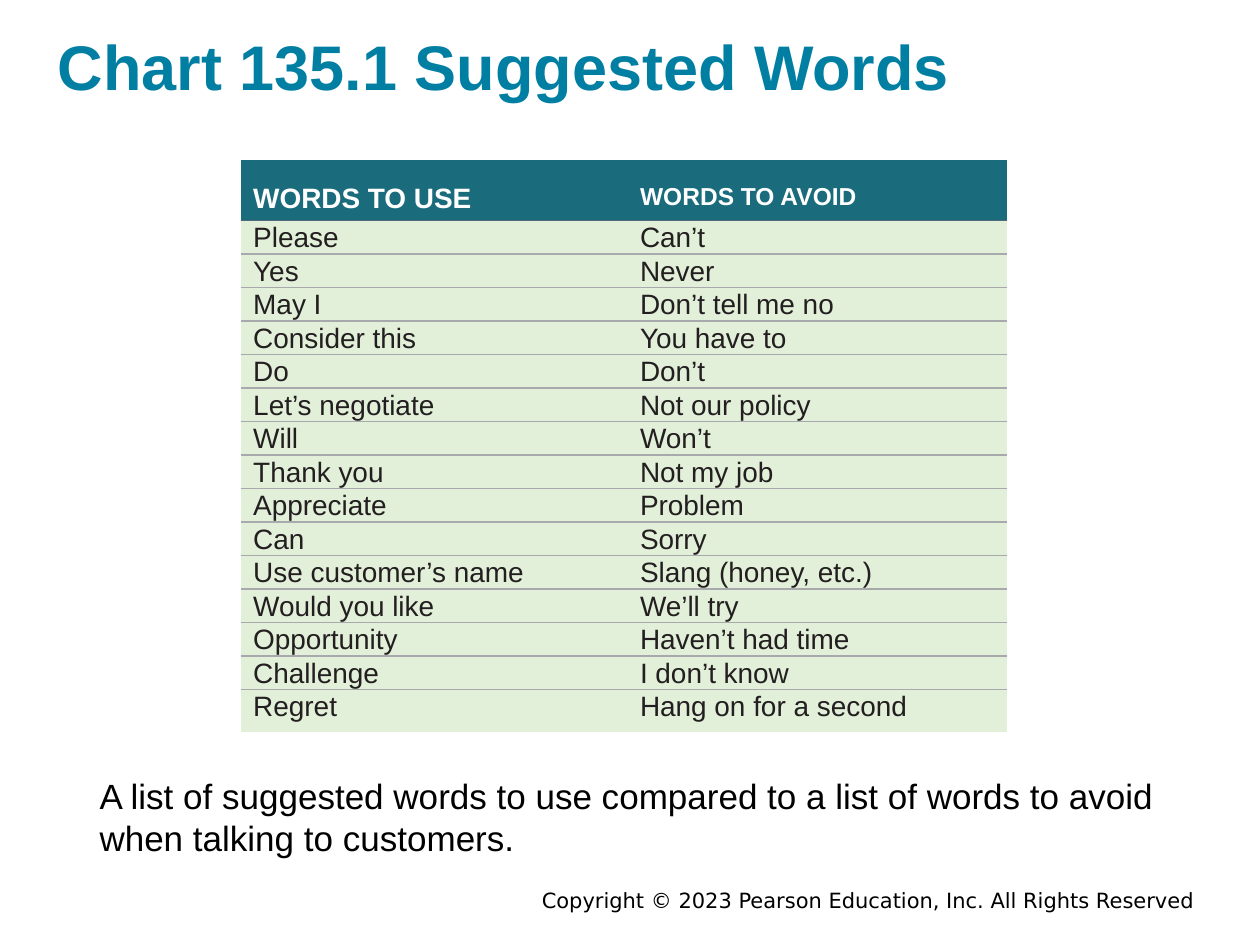
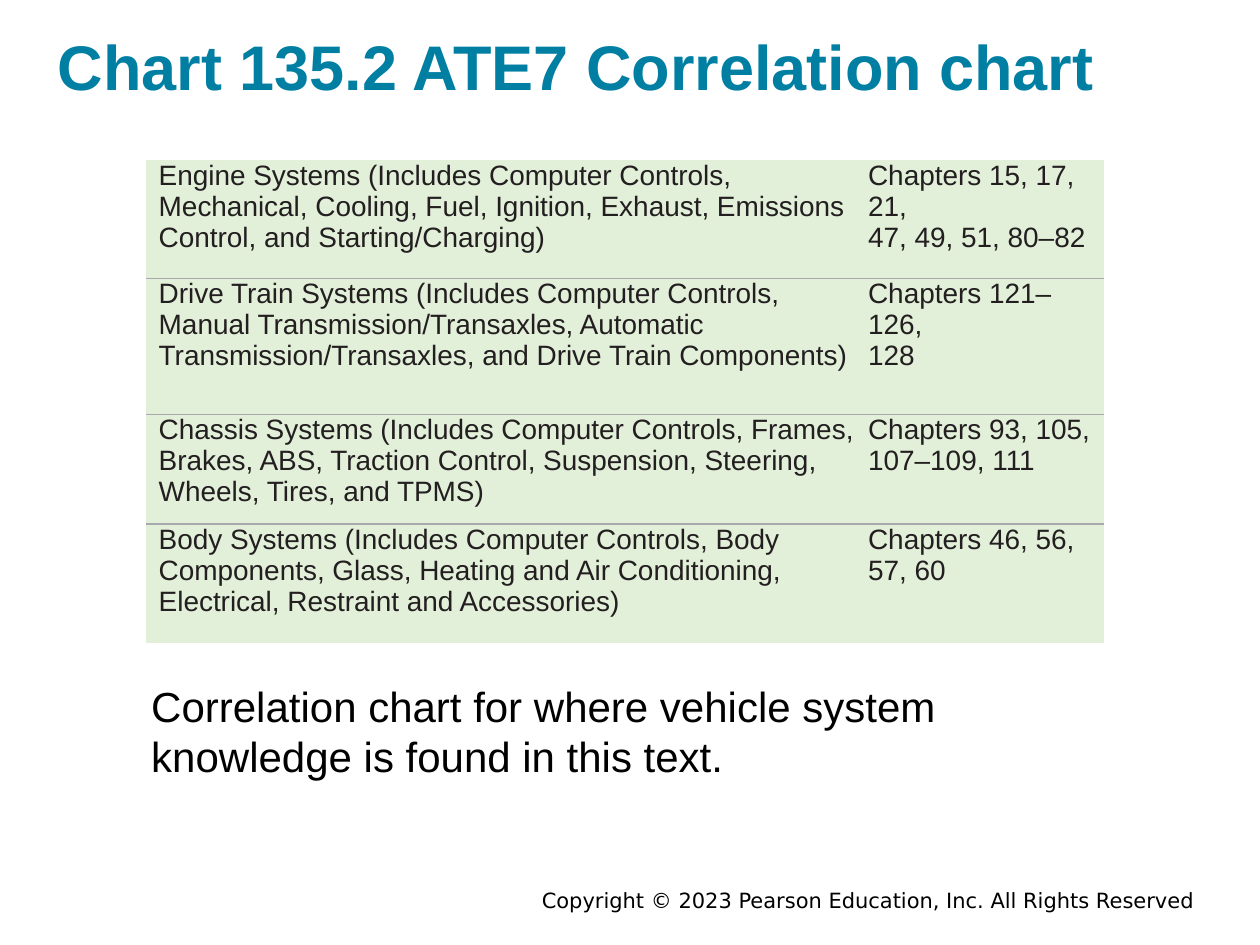
"""Build two slides of customer service charts, each with a table and a caption."""
from lxml import etree
from pptx import Presentation
from pptx.dml.color import RGBColor
from pptx.enum.text import MSO_ANCHOR, MSO_AUTO_SIZE, PP_ALIGN
from pptx.oxml.ns import qn
from pptx.util import Inches, Pt

TOP, MIDDLE = MSO_ANCHOR.TOP, MSO_ANCHOR.MIDDLE
LEFT, RIGHT = PP_ALIGN.LEFT, PP_ALIGN.RIGHT
NO_AUTOFIT = MSO_AUTO_SIZE.NONE

SLIDE_WIDTH, SLIDE_HEIGHT = Inches(10), Inches(7.5)
COLUMN = SLIDE_WIDTH // 100
ROW = SLIDE_HEIGHT // 75
TITLE_ONLY = 5
NO_TABLE_STYLE = "{2D5ABB26-0587-4C30-8999-92F81FD0307C}"

BODY_FONT, FOOTER_FONT = "Arial", "DejaVu Sans"
TITLE_BLUE, BLACK, WHITE, INK = "007FA3", "000000", "FFFFFF", "231F20"
HEADER_TEAL, CELL_GREEN = "1A6C7C", "E2EFD9"
HEADER_RULE, CELL_RULE = "4F6B79", "A7A9AC"
FOOTER = "Copyright © 2023 Pearson Education, Inc. All Rights Reserved"

WORD_PAIRS = [
    ("WORDS TO USE", "WORDS TO AVOID"),
    ("Please", "Can’t"),
    ("Yes", "Never"),
    ("May I", "Don’t tell me no"),
    ("Consider this", "You have to"),
    ("Do", "Don’t"),
    ("Let’s negotiate", "Not our policy"),
    ("Will", "Won’t"),
    ("Thank you", "Not my job"),
    ("Appreciate", "Problem"),
    ("Can", "Sorry"),
    ("Use customer’s name", "Slang (honey, etc.)"),
    ("Would you like", "We’ll try"),
    ("Opportunity", "Haven’t had time"),
    ("Challenge", "I don’t know"),
    ("Regret", "Hang on for a second"),
]
SYSTEM_CHAPTERS = [
    ("Engine Systems (Includes Computer Controls, Mechanical, Cooling, Fuel, "
     "Ignition, Exhaust, Emissions Control, and Starting/Charging)",
     "Chapters 15, 17, 21,\n47, 49, 51, 80–82"),
    ("Drive Train Systems (Includes Computer Controls, Manual "
     "Transmission/Transaxles, Automatic Transmission/Transaxles, and Drive "
     "Train Components)",
     "Chapters 121–126,\n128"),
    ("Chassis Systems (Includes Computer Controls, Frames, Brakes, ABS, "
     "Traction Control, Suspension, Steering, Wheels, Tires, and TPMS)",
     "Chapters 93, 105,\n107–109, 111"),
    ("Body Systems (Includes Computer Controls, Body Components, Glass, Heating "
     "and Air Conditioning, Electrical, Restraint and Accessories)",
     "Chapters 46, 56,\n57, 60"),
]

CHARTS = [
    {"title": "Chart 135.1 Suggested Words", "rows": WORD_PAIRS, "header": True,
     "place": (19.1, 12.7), "widths": (30.4, 30.4), "indents": (1, 1.3),
     "heights": [4.8] + [2.66] * 14 + [3.4], "line_spacing": 1.07,
     "caption": "A list of suggested words to use compared to a list of words "
                "to avoid when talking to customers.",
     "caption_place": (7.9, 61, 83.7, 7.7), "caption_size": 20},
    {"title": "Chart 135.2 ATE7 Correlation chart", "rows": SYSTEM_CHAPTERS,
     "header": False, "place": (11.6, 12.7), "widths": (56.5, 19.5),
     "indents": (1, 0.8), "heights": [9.4, 10.8, 8.7, 9.4], "line_spacing": 1,
     "caption": "Correlation chart for where vehicle system knowledge is found "
                "in this text.",
     "caption_place": (12, 53.5, 74.9, 9.1), "caption_size": 24},
]


def color(hex_string):
    return RGBColor.from_string(hex_string)


def write(frame, text, size, hex_string, font=BODY_FONT, bold=False,
          align=LEFT, anchor=TOP, line_spacing=1):
    frame.word_wrap = True
    frame.vertical_anchor = anchor
    for index, line in enumerate(text.split("\n")):
        para = frame.add_paragraph() if index else frame.paragraphs[0]
        para.alignment = align
        para.line_spacing = line_spacing
        span = para.add_run()
        span.text = line
        span.font.name, span.font.size, span.font.bold = font, Pt(size), bold
        span.font.color.rgb = color(hex_string)


deck = Presentation()
deck.slide_width, deck.slide_height = SLIDE_WIDTH, SLIDE_HEIGHT

for chart in CHARTS:
    page = deck.slides.add_slide(deck.slide_layouts[TITLE_ONLY])

    title = page.shapes.title
    title.left, title.top = int(4.6 * COLUMN), int(1.7 * ROW)
    title.width, title.height = int(89.9 * COLUMN), int(7.1 * ROW)
    title.text_frame.auto_size = NO_AUTOFIT
    title.text_frame.margin_left = title.text_frame.margin_right = 0
    write(title.text_frame, chart["title"], 36, TITLE_BLUE, bold=True)

    left, top = chart["place"]
    table = page.shapes.add_table(
        len(chart["rows"]), len(chart["widths"]), int(left * COLUMN), int(top * ROW),
        int(sum(chart["widths"]) * COLUMN), int(sum(chart["heights"]) * ROW)).table
    table.first_row = chart["header"]
    table.horz_banding = False
    table._tbl.tblPr.find(qn("a:tableStyleId")).text = NO_TABLE_STYLE
    for index, width in enumerate(chart["widths"]):
        table.columns[index].width = int(width * COLUMN)

    last_row = len(chart["rows"]) - 1
    for row_index, texts in enumerate(chart["rows"]):
        table.rows[row_index].height = int(chart["heights"][row_index] * ROW)
        is_header = chart["header"] and row_index == 0
        for column_index, text in enumerate(texts):
            cell = table.cell(row_index, column_index)
            cell.margin_left = int(chart["indents"][column_index] * COLUMN)
            cell.margin_right = cell.margin_bottom = 0
            cell.margin_top = int(1.7 * ROW) if is_header else 0
            cell.fill.solid()
            cell.fill.fore_color.rgb = color(HEADER_TEAL if is_header else CELL_GREEN)
            size = 14 if is_header and column_index else 16
            write(cell.text_frame, text, size, WHITE if is_header else INK,
                  bold=is_header, line_spacing=chart["line_spacing"])

            edges = []
            if row_index > 0:
                after_header = chart["header"] and row_index == 1
                edges.append(("a:lnT", HEADER_RULE if after_header else CELL_RULE))
            if row_index < last_row:
                edges.append(("a:lnB", HEADER_RULE if is_header else CELL_RULE))
            properties = cell._tc.get_or_add_tcPr()
            for position, (tag, rule_color) in enumerate(edges):
                line = etree.Element(qn(tag), w=str(Pt(1)))
                fill = etree.SubElement(line, qn("a:solidFill"))
                etree.SubElement(fill, qn("a:srgbClr"), val=rule_color)
                properties.insert(position, line)

    left, top, width, height = chart["caption_place"]
    caption = page.shapes.add_textbox(int(left * COLUMN), int(top * ROW),
                                      int(width * COLUMN), int(height * ROW))
    caption.text_frame.margin_left = caption.text_frame.margin_right = 0
    write(caption.text_frame, chart["caption"], chart["caption_size"], BLACK)

    footer = page.shapes.add_textbox(int(17.5 * COLUMN), int(70.3 * ROW),
                                     int(78.3 * COLUMN), int(2.2 * ROW))
    write(footer.text_frame, FOOTER, 12, BLACK, font=FOOTER_FONT,
          align=RIGHT, anchor=MIDDLE)

deck.save("out.pptx")
